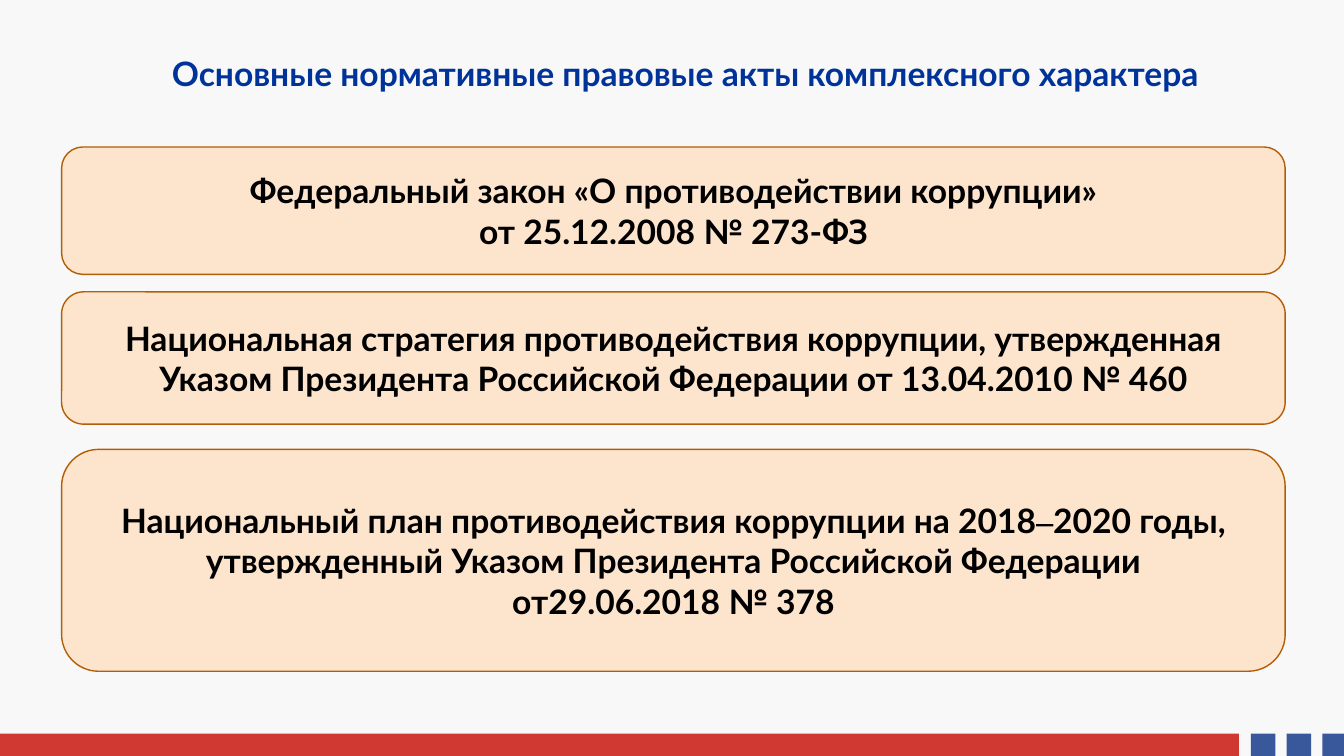
from dataclasses import dataclass

from lxml.etree import SubElement
from pptx import Presentation
from pptx.dml.color import RGBColor as Rgb
from pptx.enum.shapes import MSO_SHAPE as Kind
from pptx.enum.text import MSO_ANCHOR as Anchor, MSO_AUTO_SIZE as Fit, PP_ALIGN as Align
from pptx.oxml.ns import qn
from pptx.util import Pt


@dataclass(frozen=True)
class Theme:
    back: str = "F8F8F8"
    title: str = "003399"
    text: str = "000000"
    card: str = "FDE5CD"
    edge: str = "B25E07"
    red: str = "C70A00"
    blue: str = "0A3085"
    alpha: int = 80
    font: str = "Lato"
    dash: str = "Times New Roman"
    size: int = 24


LOOK = Theme()
WIDE, HIGH = 960, 540

TITLE = "Основные нормативные правовые акты комплексного характера"

# Top, height and lines of each legal act
ACTS = [
    (105, 91, ["Федеральный закон «О противодействии коррупции»",
               "от 25.12.2008 № 273-ФЗ"]),
    (208.5, 94.5, ["Национальная стратегия противодействия коррупции, утвержденная "
                   "Указом Президента Российской Федерации от 13.04.2010 № 460"]),
    (321, 158.5, ["Национальный план противодействия коррупции на 2018–2020 годы, "
                  "утвержденный Указом Президента Российской Федерации",
                  "от29.06.2018 № 378"]),
]


def write(frame, lines, color=LOOK.text, anchor=Anchor.MIDDLE):
    """Fill a frame with centred bold lines; en dashes get their own font."""
    frame.word_wrap = True
    frame.auto_size = Fit.NONE
    frame.vertical_anchor = anchor
    for i, line in enumerate(lines):
        para = frame.add_paragraph() if i else frame.paragraphs[0]
        para.alignment = Align.CENTER
        head, dash, tail = line.partition("–")
        for text, face in ((head, LOOK.font), (dash, LOOK.dash), (tail, LOOK.font)):
            if text:
                run = para.add_run()
                run.text = text
                font = run.font
                font.name, font.size, font.bold = face, Pt(LOOK.size), True
                font.color.rgb = Rgb.from_string(color)


def block(slide, kind, box, fill, edge=None, alpha=None):
    """Add a filled shape with an optional outline and opacity."""
    shape = slide.shapes.add_shape(kind, *map(Pt, box))
    shape.shadow.inherit = False
    shape.fill.solid()
    shape.fill.fore_color.rgb = Rgb.from_string(fill)
    if alpha:
        tint = next(shape.fill._xPr.iter(qn("a:srgbClr")))
        SubElement(tint, qn("a:alpha")).set("val", str(alpha * 1000))
    if edge:
        shape.line.color.rgb = Rgb.from_string(edge)
        shape.line.width = Pt(1)
    else:
        shape.line.fill.background()
    return shape


def header(slide, box):
    title = slide.shapes.title
    title.left, title.top, title.width, title.height = map(Pt, box)
    write(title.text_frame, [TITLE], color=LOOK.title, anchor=Anchor.BOTTOM)


def cards(slide, left, width):
    for top, height, lines in ACTS:
        box = (left, top, width, height)
        card = block(slide, Kind.ROUNDED_RECTANGLE, box, LOOK.card, LOOK.edge)
        write(card.text_frame, lines)


def footer(slide, box):
    left, top, width, height = box
    bar, side, step = 885, 17.5, 25.5
    block(slide, Kind.RECTANGLE, (left, top, bar, height), LOOK.red, alpha=LOOK.alpha)
    # Three squares, the last one ending at the slide edge
    first = left + bar + 8.5
    for i in range(3):
        x = first + i * step
        part = min(side, left + width - x)
        block(slide, Kind.RECTANGLE, (x, top, part, height), LOOK.blue, alpha=LOOK.alpha)


def main():
    deck = Presentation()
    deck.slide_width, deck.slide_height = Pt(WIDE), Pt(HIGH)
    slide = deck.slides.add_slide(deck.slide_layouts[5])
    slide.background.fill.solid()
    slide.background.fill.fore_color.rgb = Rgb.from_string(LOOK.back)

    footer(slide, (0, 524, WIDE, 16))
    cards(slide, 44, 874)
    header(slide, (80, 5, 819, 65.5))
    deck.save("out.pptx")


if __name__ == "__main__":
    main()
